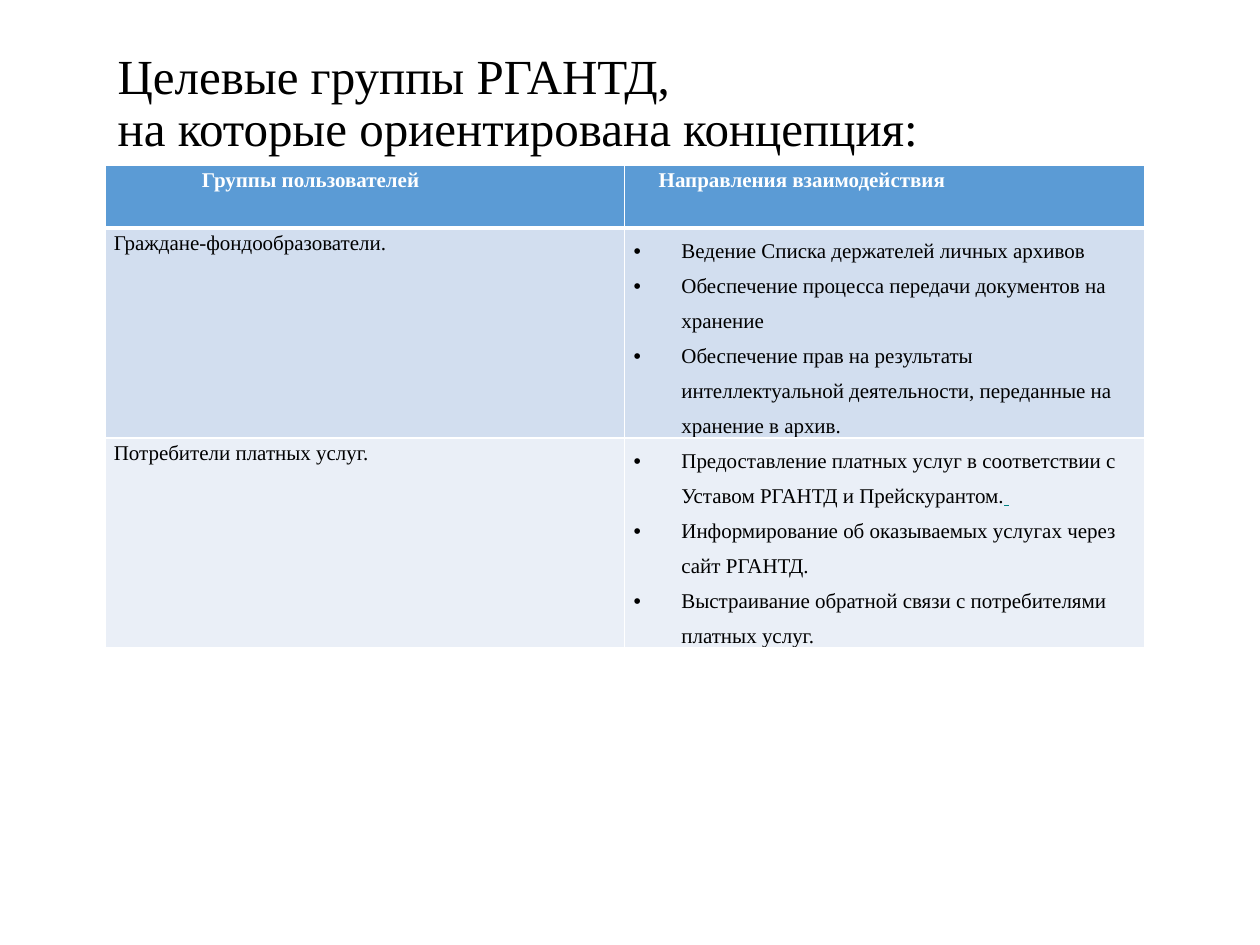
from lxml import etree
from pptx import Presentation
from pptx.dml.color import RGBColor
from pptx.enum.text import MSO_ANCHOR, MSO_AUTO_SIZE, PP_ALIGN
from pptx.oxml.ns import qn
from pptx.util import Inches, Pt

LEFT = PP_ALIGN.LEFT
MIDDLE = MSO_ANCHOR.MIDDLE
NO_FIT = MSO_AUTO_SIZE.NONE
TITLE_ONLY = 5
FONT = "Times New Roman"
WHITE, BLACK, TEAL = "FFFFFF", "000000", "008080"
ROW_FILLS = ["5B9BD5", "D2DEEF", "EAEFF7"]
ROW_HEIGHTS = [0.5, 1.47, 1.47]

HEADERS = [("Группы пользователей", 0.5), ("Направления взаимодействия", 0)]
GROUPS = [
    ("Граждане-фондообразователи.", [
        "Ведение Списка держателей личных архивов",
        "Обеспечение процесса передачи документов на хранение",
        "Обеспечение прав на результаты интеллектуальной деятельности, "
        "переданные на хранение в архив.",
    ]),
    ("Потребители платных услуг.", [
        "Предоставление платных услуг в соответствии с Уставом РГАНТД и Прейскурантом.",
        "Информирование об оказываемых услугах через сайт РГАНТД.",
        "Выстраивание обратной связи с потребителями платных услуг.",
    ]),
]


def style(para, size, color, spacing, bold=False):
    para.alignment = LEFT
    para.line_spacing = spacing
    for span in para.runs:
        span.font.name = FONT
        span.font.size = Pt(size)
        span.font.bold = bold
        span.font.color.rgb = RGBColor.from_string(color)


def indent(para, margin, first, bullet=None):
    properties = para._p.get_or_add_pPr()
    properties.set("marL", str(Inches(margin)))
    properties.set("indent", str(Inches(first)))
    if bullet:
        etree.SubElement(properties, qn("a:buFont")).set("typeface", "Arial")
        etree.SubElement(properties, qn("a:buChar")).set("char", bullet)


deck = Presentation()
deck.slide_width, deck.slide_height = Inches(10), Inches(7.5)
page = deck.slides.add_slide(deck.slide_layouts[TITLE_ONLY])
margin = deck.slide_width // 12

title = page.shapes.title
title.left, title.top = margin, Inches(0.36)
title.width, title.height = Inches(8.27), Inches(0.94)
frame = title.text_frame
frame.text = "Целевые группы РГАНТД, \vна которые ориентирована концепция:"
frame.word_wrap = True
frame.auto_size = NO_FIT
frame.vertical_anchor = MIDDLE
style(frame.paragraphs[0], 28, BLACK, 0.9)

table = page.shapes.add_table(
    3, 2, margin, Inches(1.31), Inches(8.25), Inches(sum(ROW_HEIGHTS))
).table

for row_index, row in enumerate(table.rows):
    row.height = Inches(ROW_HEIGHTS[row_index])
    for cell in row.cells:
        cell.margin_left = cell.margin_right = Inches(0.07)
        cell.margin_top = cell.margin_bottom = 0
        properties = cell._tc.get_or_add_tcPr()
        for side in ("L", "R", "T", "B"):
            heavy = (row_index, side) in ((0, "B"), (1, "T"))
            line = etree.SubElement(properties, qn(f"a:ln{side}"))
            line.set("w", str(Pt(3 if heavy else 1)))
            paint = etree.SubElement(line, qn("a:solidFill"))
            etree.SubElement(paint, qn("a:srgbClr")).set("val", WHITE)
        cell.fill.solid()
        cell.fill.fore_color.rgb = RGBColor.from_string(ROW_FILLS[row_index])

for column, (header, left) in enumerate(HEADERS):
    para = table.cell(0, column).text_frame.paragraphs[0]
    para.text = header
    indent(para, left, 0.2)
    style(para, 12, WHITE, 1.15, bold=True)

for row_index, (group, directions) in enumerate(GROUPS, start=1):
    para = table.cell(row_index, 0).text_frame.paragraphs[0]
    para.text = group
    style(para, 12, BLACK, 1.15)
    frame = table.cell(row_index, 1).text_frame
    frame.text = "\n".join(directions)
    for para in frame.paragraphs:
        indent(para, 0.38, -0.38, "•")
        style(para, 12, BLACK, 1.5)

para = table.cell(2, 1).text_frame.paragraphs[0]
span = para.add_run()
span.text = " "
style(para, 12, BLACK, 1.5)
span.font.underline = True
span.font.color.rgb = RGBColor.from_string(TEAL)

deck.save("out.pptx")
